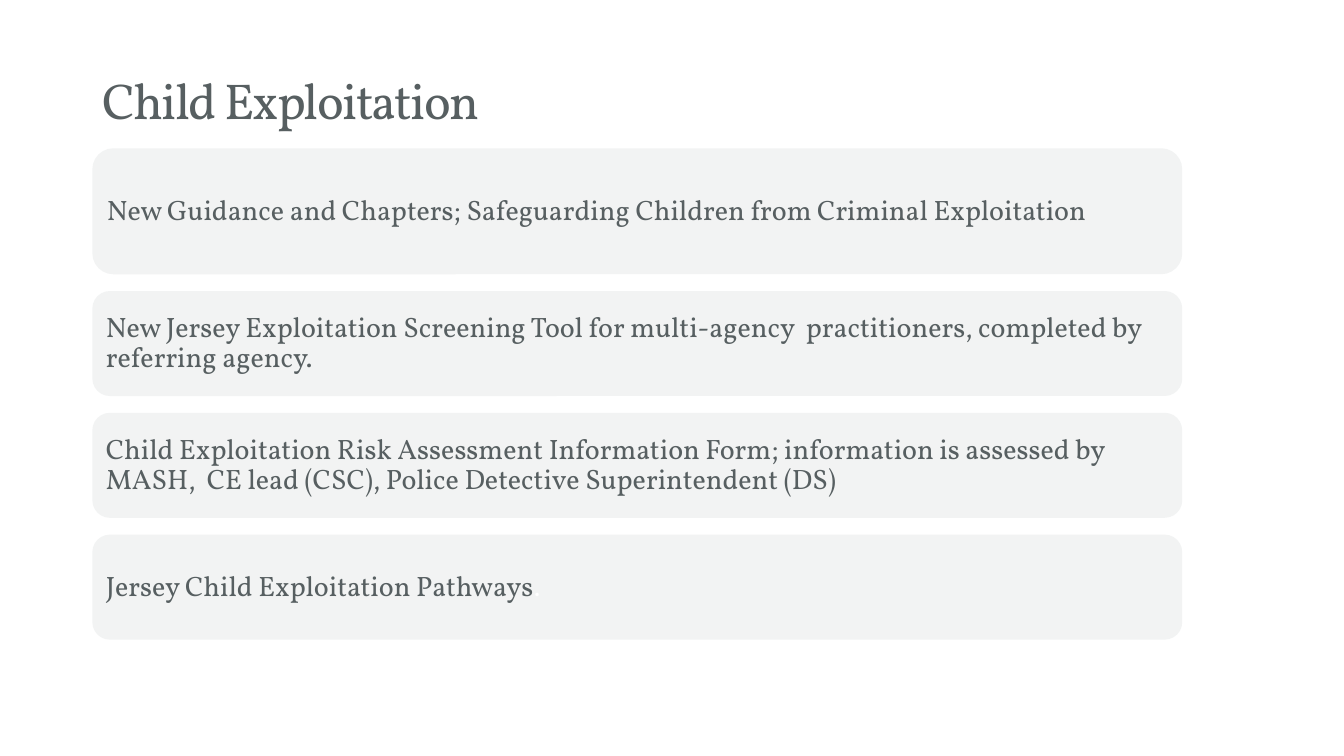
from pptx import Presentation
from pptx.dml.color import RGBColor
from pptx.enum.shapes import MSO_SHAPE
from pptx.enum.text import MSO_ANCHOR, PP_ALIGN
from pptx.util import Pt

ROUNDED = MSO_SHAPE.ROUNDED_RECTANGLE
MIDDLE, TOP = MSO_ANCHOR.MIDDLE, MSO_ANCHOR.TOP
LEFT = PP_ALIGN.LEFT

COLORS = {"text": "575F61", "panel": "F2F3F3", "white": "FFFFFF"}
TITLE = {"name": "Vollkorn", "size": Pt(36), "color": "text"}
BODY = {"name": "Vollkorn", "size": Pt(20), "color": "text"}
FULL_STOP = {"name": "Lato", "size": Pt(20), "color": "white"}

PANELS = [
    (90, [("New Guidance and Chapters; Safeguarding Children from Criminal Exploitation", BODY)]),
    (75, [("New Jersey Exploitation Screening Tool for multi-agency  practitioners, "
           "completed by referring agency.", BODY)]),
    (75, [("Child Exploitation Risk Assessment Information Form; information is assessed by "
           "MASH,  CE lead (CSC), Police Detective Superintendent (DS)", BODY)]),
    (75, [("Jersey Child Exploitation Pathways", BODY), (".", FULL_STOP)]),
]
PANEL_GAP = 12


def rgb(key):
    """Return the named colour."""
    return RGBColor.from_string(COLORS[key])


def write(tf, runs, frame):
    """Fill a text frame with one left-aligned paragraph of formatted runs."""
    for name, value in frame.items():
        setattr(tf, name, value)
    p = tf.paragraphs[0]
    p.alignment = LEFT
    p.line_spacing = 0.9
    for text, style in runs:
        r = p.add_run()
        r.text = text
        for name, value in style.items():
            if name == "color":
                r.font.color.rgb = rgb(value)
            else:
                setattr(r.font, name, value)
    return p


def add_title(s, x, y, w, h):
    """Place the tightly tracked heading in its box."""
    tb = s.shapes.add_textbox(Pt(x), Pt(y), Pt(w), Pt(h))
    p = write(tb.text_frame, [("Child Exploitation", TITLE)],
              {"word_wrap": True, "vertical_anchor": TOP})
    p.runs[0].font._element.set("spc", "-120")


def add_panels(s, x, y, w):
    """Stack the rounded panels downwards from the given corner."""
    margins = {f"margin_{side}": Pt(6) for side in ("left", "top", "right", "bottom")}
    for h, runs in PANELS:
        sp = s.shapes.add_shape(ROUNDED, Pt(x), Pt(y), Pt(w), Pt(h))
        sp.shadow.inherit = False
        sp.fill.solid()
        sp.fill.fore_color.rgb = rgb("panel")
        sp.line.fill.background()
        write(sp.text_frame, runs, {"word_wrap": True, "vertical_anchor": MIDDLE, **margins})
        y += h + PANEL_GAP


def main():
    """Build and save the slide."""
    prs = Presentation()
    prs.slide_width, prs.slide_height = Pt(960), Pt(540)
    s = prs.slides.add_slide(prs.slide_layouts[6])
    add_title(s, 66, 50.4, 804, 80)
    add_panels(s, 66, 105.9, 778.5)
    prs.save("out.pptx")


if __name__ == "__main__":
    main()
